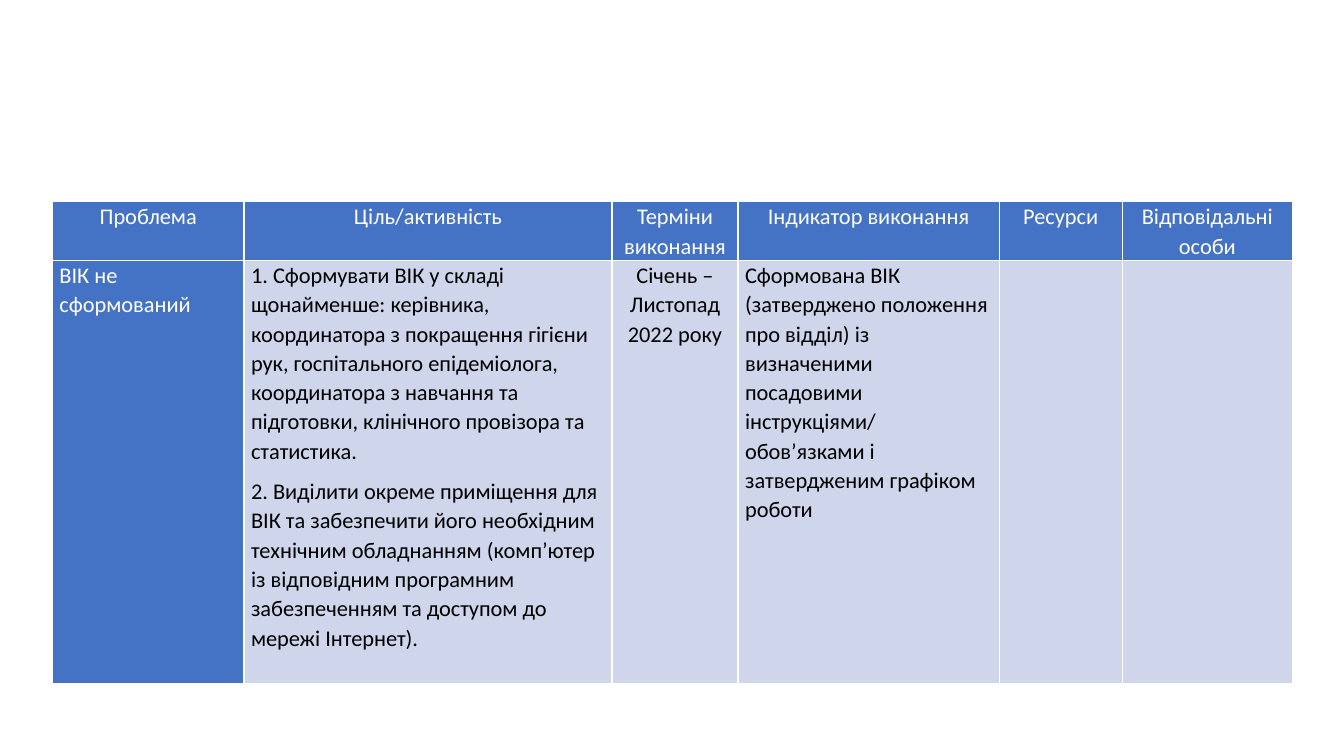
from lxml.etree import SubElement
from pptx import Presentation
from pptx.dml.color import RGBColor
from pptx.enum.text import PP_ALIGN as Align
from pptx.oxml.ns import qn
from pptx.util import Inches, Pt

BLUE = RGBColor(0x44, 0x72, 0xC4)
PALE = RGBColor(0xCF, 0xD5, 0xEA)
WHITE = RGBColor(0xFF, 0xFF, 0xFF)
BLACK = RGBColor(0, 0, 0)

COLUMN_WIDTHS = [1.9, 3.65, 1.25, 2.59, 1.22, 1.69]
ROW_HEIGHTS = [0.49, 4.2]
CENTRED_COLUMN = 2

# Each cell is a list of paragraphs
PLAN = [
    [["Проблема"], ["Ціль/активність"], ["Терміни виконання"],
     ["Індикатор виконання"], ["Ресурси"], ["Відповідальні особи"]],
    [["ВІК не сформований"],
     ["1. Сформувати ВІК у складі щонайменше: керівника, координатора з "
      "покращення гігієни рук, госпітального епідеміолога, координатора з "
      "навчання та підготовки, клінічного провізора та статистика.",
      "2. Виділити окреме приміщення для ВІК та забезпечити його необхідним "
      "технічним обладнанням (комп’ютер із відповідним програмним "
      "забезпеченням та доступом до мережі Інтернет)."],
     ["Січень – Листопад 2022 року"],
     ["Сформована ВІК (затверджено положення про відділ) із визначеними "
      "посадовими інструкціями/ обов’язками і затвердженим графіком роботи"],
     [], []],
]


def add_borders(cell):
    """Draw a thin white line on all four sides."""
    properties = cell._tc.get_or_add_tcPr()
    for side in ("lnL", "lnR", "lnT", "lnB"):
        line = SubElement(properties, qn(f"a:{side}"), w=str(Pt(1)))
        fill = SubElement(line, qn("a:solidFill"))
        SubElement(fill, qn("a:srgbClr"), val=str(WHITE))


def fill_cell(cell, texts, background, colour, align):
    cell.margin_left = cell.margin_right = Inches(0.07)
    cell.margin_top = cell.margin_bottom = 0
    add_borders(cell)
    cell.fill.solid()
    cell.fill.fore_color.rgb = background
    for index, text in enumerate(texts):
        frame = cell.text_frame
        para = frame.add_paragraph() if index else frame.paragraphs[0]
        para.alignment = align
        para.line_spacing = 1.07
        para.space_after = Pt(8)
        span = para.add_run()
        span.text = text
        span.font.name = "Calibri"
        span.font.size = Pt(16)
        span.font.bold = False
        span.font.color.rgb = colour


def add_plan_table(page, left, top):
    rows, columns = len(ROW_HEIGHTS), len(COLUMN_WIDTHS)
    table = page.shapes.add_table(
        rows, columns, left, top,
        Inches(sum(COLUMN_WIDTHS)), Inches(sum(ROW_HEIGHTS))).table
    table.first_col = True
    table.horz_banding = False
    for column, width in zip(table.columns, COLUMN_WIDTHS):
        column.width = Inches(width)
    for row, height in zip(table.rows, ROW_HEIGHTS):
        row.height = Inches(height)

    # The header row and the first column are blue, the rest is pale
    for r, record in enumerate(PLAN):
        for c, texts in enumerate(record):
            heading = r == 0 or c == 0
            centred = r == 0 or c == CENTRED_COLUMN
            fill_cell(table.cell(r, c), texts,
                      BLUE if heading else PALE,
                      WHITE if heading else BLACK,
                      Align.CENTER if centred else Align.LEFT)


def main():
    deck = Presentation()
    deck.slide_width, deck.slide_height = Inches(13.33), Inches(7.5)
    page = deck.slides.add_slide(deck.slide_layouts[6])
    add_plan_table(page, Inches(0.52), Inches(2))
    deck.save("out.pptx")


if __name__ == "__main__":
    main()
